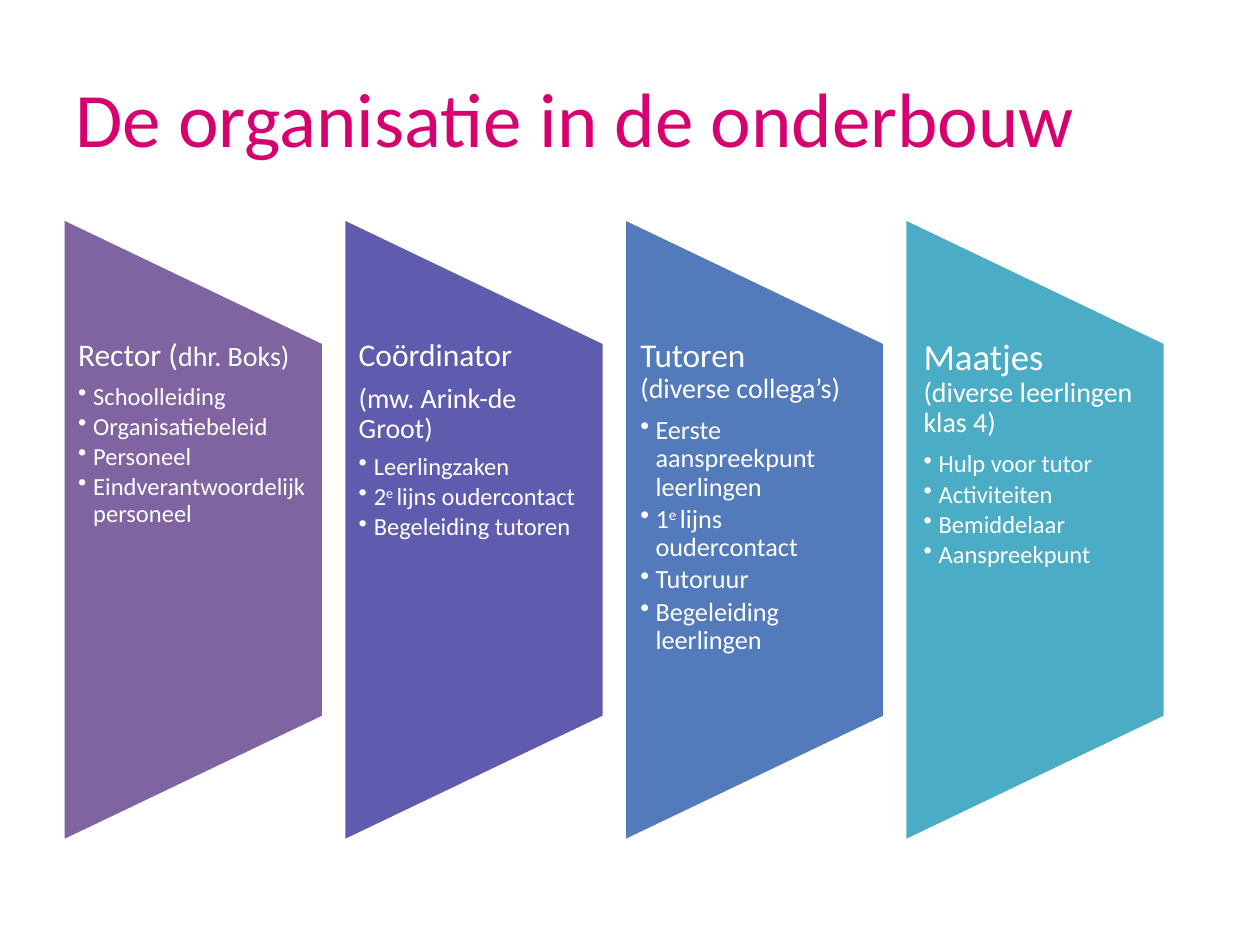
"""Build the slide showing who does what in the lower school."""
from dataclasses import dataclass
from typing import NamedTuple

from lxml import etree
from pptx import Presentation
from pptx.dml.color import RGBColor
from pptx.enum import shapes, text
from pptx.oxml.ns import qn
from pptx.util import Inches, Pt

COLOURS = {
    "title": "D6006E",
    "white": "FFFFFF",
    "rector": "8064A2",
    "coordinator": "5F5BAE",
    "tutors": "537ABA",
    "buddies": "4BACC6",
}
FONT = "Calibri"
LEFT, TOP, WIDTH, HEIGHT = 0.5, 1.73, 2.07, 4.95
PITCH = 6.68 / 3
TEXT_TOP, TEXT_HEIGHT = 2.69, 2.97
HANG = 0.12


class Span(NamedTuple):
    words: str
    size: float
    raised: bool = False


@dataclass
class Role:
    colour: str
    inset: float
    headings: list[list[Span]]
    size: float
    tasks: list[str]


ROLES = [
    Role("rector", 0.12, [[Span("Rector (", 18), Span("dhr. Boks)", 16)]], 14,
         ["Schoolleiding", "Organisatiebeleid", "Personeel",
          "Eindverantwoordelijk personeel"]),
    Role("coordinator", 0.12,
         [[Span("Coördinator", 18)], [Span("(mw. Arink-de Groot)", 16)]], 14,
         ["Leerlingzaken", "2^e ^lijns oudercontact", "Begeleiding tutoren"]),
    Role("tutors", 0.13,
         [[Span("Tutoren\n", 19), Span("(diverse collega’s)", 16)]], 15,
         ["Eerste aanspreekpunt leerlingen", "1^e ^lijns oudercontact",
          "Tutoruur", "Begeleiding leerlingen"]),
    Role("buddies", 0.15,
         [[Span("Maatjes\n", 21), Span("(diverse leerlingen klas 4)", 16)]], 14,
         ["Hulp voor tutor", "Activiteiten", "Bemiddelaar", "Aanspreekpunt"]),
]


def rgb(name: str) -> RGBColor:
    return RGBColor.from_string(COLOURS[name])


def apply(target, values: dict) -> None:
    for name, value in values.items():
        setattr(target, name, value)


def add_box(parent, place: tuple, inset: float, anchor):
    box = parent.add_textbox(*map(Inches, place))
    apply(box.text_frame, {
        "word_wrap": True,
        "auto_size": text.MSO_AUTO_SIZE.NONE,
        "vertical_anchor": anchor,
        "margin_left": Inches(inset),
        "margin_right": Inches(inset),
        "margin_top": 0,
        "margin_bottom": 0,
    })
    return box.text_frame


def write(para, spans: list[Span], colour: str) -> None:
    for item in spans:
        span = para.add_run()
        span.text = item.words.rstrip("\n")
        apply(span.font, {"name": FONT, "size": Pt(item.size)})
        span.font.color.rgb = rgb(colour)
        if item.raised:
            span.font._element.set("baseline", "30000")
        if item.words.endswith("\n"):
            para.add_line_break()


def add_bullet(para) -> None:
    settings = para._p.get_or_add_pPr()
    settings.set("marL", str(Inches(HANG)))
    settings.set("indent", str(-Inches(HANG)))
    etree.SubElement(settings, qn("a:buChar")).set("char", "•")


def task_spans(task: str, size: float) -> list[Span]:
    return [Span(part, size, index % 2 == 1)
            for index, part in enumerate(task.split("^"))]


def draw_panel(parent, role: Role, left: float) -> None:
    panel = parent.add_shape(
        shapes.MSO_SHAPE.FLOWCHART_MANUAL_OPERATION,
        Inches(left + (WIDTH - HEIGHT) / 2), Inches(TOP + (HEIGHT - WIDTH) / 2),
        Inches(HEIGHT), Inches(WIDTH))
    panel.rotation = 270
    panel.shadow.inherit = False
    panel.fill.solid()
    panel.fill.fore_color.rgb = rgb(role.colour)
    panel.line.color.rgb = rgb("white")
    panel.line.width = Pt(2)


def draw_duties(parent, role: Role, left: float) -> None:
    frame = add_box(parent, (left, TEXT_TOP, WIDTH, TEXT_HEIGHT),
                    role.inset, text.MSO_ANCHOR.TOP)
    lines = [(spans, False) for spans in role.headings]
    lines += [(task_spans(task, role.size), True) for task in role.tasks]
    for index, (spans, bulleted) in enumerate(lines):
        para = frame.add_paragraph() if index else frame.paragraphs[0]
        if bulleted:
            add_bullet(para)
        share = 0.15 if bulleted else 0.35
        apply(para, {
            "level": int(bulleted),
            "alignment": text.PP_ALIGN.LEFT,
            "line_spacing": 0.9,
            "space_before": Pt(0),
            "space_after": Pt(round(share * spans[0].size, 1)),
        })
        write(para, spans, "white")


def main() -> None:
    deck = Presentation()
    apply(deck, {"slide_width": Inches(10), "slide_height": Inches(7.5)})
    page = deck.slides.add_slide(deck.slide_layouts[6])
    title = add_box(page.shapes, (0.5, 0.3, 8.75, 1.25), 0.1,
                    text.MSO_ANCHOR.MIDDLE)
    write(title.paragraphs[0], [Span("De organisatie in de onderbouw", 44)], "title")
    group = page.shapes.add_group_shape()
    for index, role in enumerate(ROLES):
        left = LEFT + index * PITCH
        draw_panel(group.shapes, role, left)
        draw_duties(group.shapes, role, left)
    deck.save("out.pptx")


if __name__ == "__main__":
    main()
